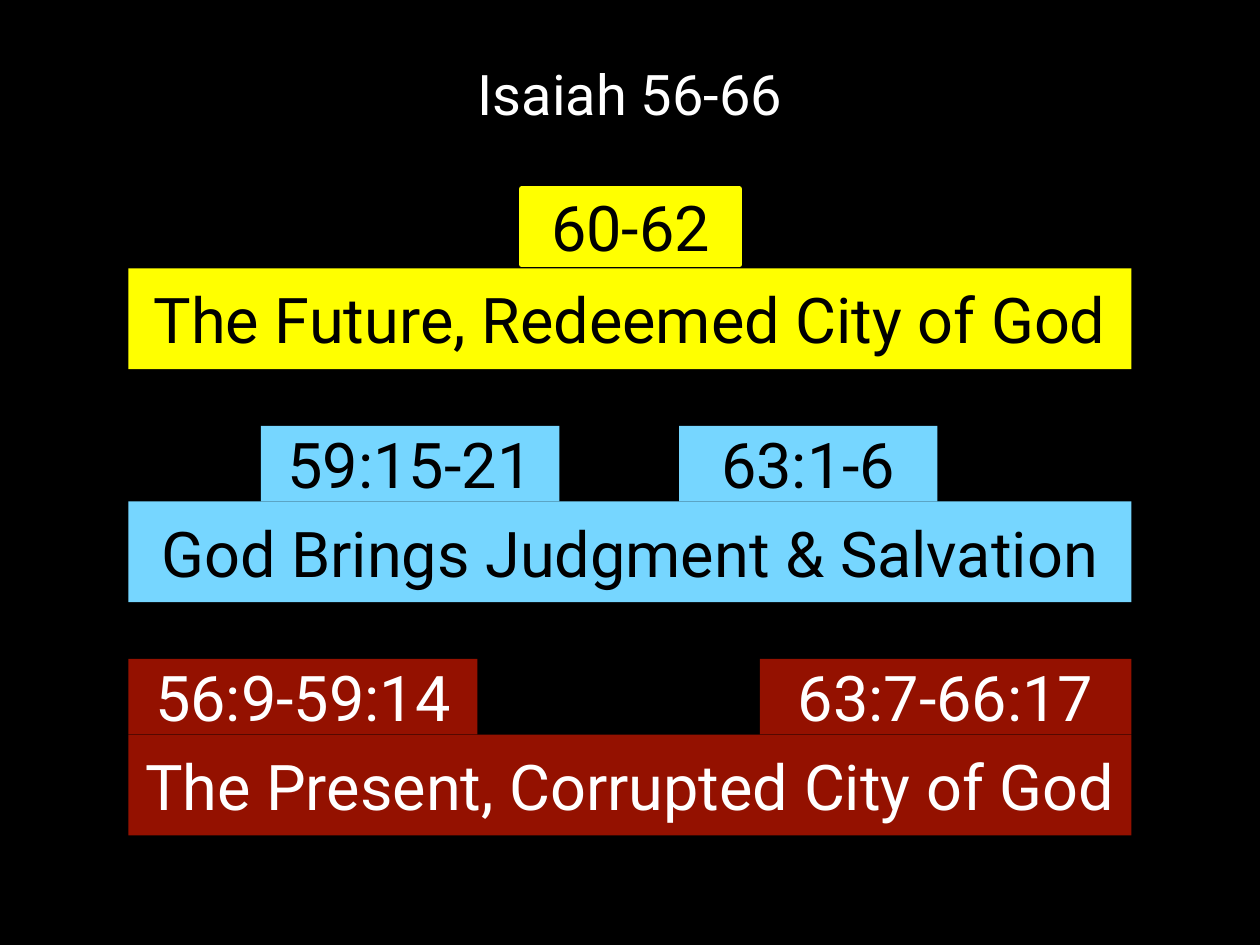
from dataclasses import dataclass

import pptx
import pptx.dml.color
import pptx.enum.shapes
import pptx.enum.text
import pptx.util

PX = 9144  # EMU per px, at 100 px to the inch
SLIDE_W, SLIDE_H = 1000, 750
BAR_LEFT, BAR_W, BAR_H = 102, 796, 80
TAB_H = 60


@dataclass(frozen=True)
class Theme:
    font: str = "Roboto"
    title_pt: int = 32
    label_pt: int = 36
    black: str = "000000"
    white: str = "FFFFFF"
    yellow: str = "FFFF00"
    blue: str = "76D6FF"
    red: str = "941100"


@dataclass(frozen=True)
class Tab:
    text: str
    left: int
    width: int


@dataclass(frozen=True)
class Tier:
    text: str
    tab_top: int
    bar_top: int
    fill: str
    ink: str
    tabs: tuple[Tab, ...]
    tab_line_pt: int = 0


THEME = Theme()
TIERS = (
    Tier("The Future, Redeemed City of God", 150, 213, THEME.yellow, THEME.black,
         (Tab("60-62", 414, 173),), tab_line_pt=3),
    Tier("God Brings Judgment & Salvation", 338, 398, THEME.blue, THEME.black,
         (Tab("59:15-21", 207, 237), Tab("63:1-6", 539, 205))),
    Tier("The Present, Corrupted City of God", 523, 583, THEME.red, THEME.white,
         (Tab("56:9-59:14", BAR_LEFT, 277), Tab("63:7-66:17", 603, 295))),
)


def rgb(color: str) -> pptx.dml.color.RGBColor:
    return pptx.dml.color.RGBColor.from_string(color)


def write(sp, text: str, size: int, color: str, spacing: float | None = None) -> None:
    """Put one centred line of text in the middle of a shape."""
    tf = sp.text_frame
    tf.word_wrap = True
    tf.vertical_anchor = pptx.enum.text.MSO_ANCHOR.MIDDLE
    p = tf.paragraphs[0]
    p.alignment = pptx.enum.text.PP_ALIGN.CENTER
    p.line_spacing = spacing
    r = p.add_run()
    r.text = text
    r.font.name = THEME.font
    r.font.size = pptx.util.Pt(size)
    r.font.color.rgb = rgb(color)


def add_block(s, text: str, box: tuple[int, int, int, int], tier: Tier, line_pt: int = 0) -> None:
    sp = s.shapes.add_shape(pptx.enum.shapes.MSO_SHAPE.RECTANGLE, *(v * PX for v in box))
    sp.shadow.inherit = False
    sp.fill.solid()
    sp.fill.fore_color.rgb = rgb(tier.fill)
    if line_pt:
        sp.line.color.rgb = rgb(tier.fill)
        sp.line.width = pptx.util.Pt(line_pt)
    else:
        sp.line.fill.background()
    write(sp, text, THEME.label_pt, tier.ink)


def add_tier(s, tier: Tier) -> None:
    for tab in tier.tabs:
        add_block(s, tab.text, (tab.left, tier.tab_top, tab.width, TAB_H), tier, tier.tab_line_pt)
    add_block(s, tier.text, (BAR_LEFT, tier.bar_top, BAR_W, BAR_H), tier)


def add_title(s, text: str) -> None:
    sp = s.shapes.add_textbox(*(v * PX for v in (69, 37, 862, 81)))
    write(sp, text, THEME.title_pt, THEME.white, spacing=0.9)


def main() -> None:
    prs = pptx.Presentation()
    prs.slide_width, prs.slide_height = SLIDE_W * PX, SLIDE_H * PX
    s = prs.slides.add_slide(prs.slide_layouts[6])
    s.background.fill.solid()
    s.background.fill.fore_color.rgb = rgb(THEME.black)
    for tier in TIERS:
        add_tier(s, tier)
    add_title(s, "Isaiah 56-66")
    prs.save("out.pptx")


if __name__ == "__main__":
    main()
